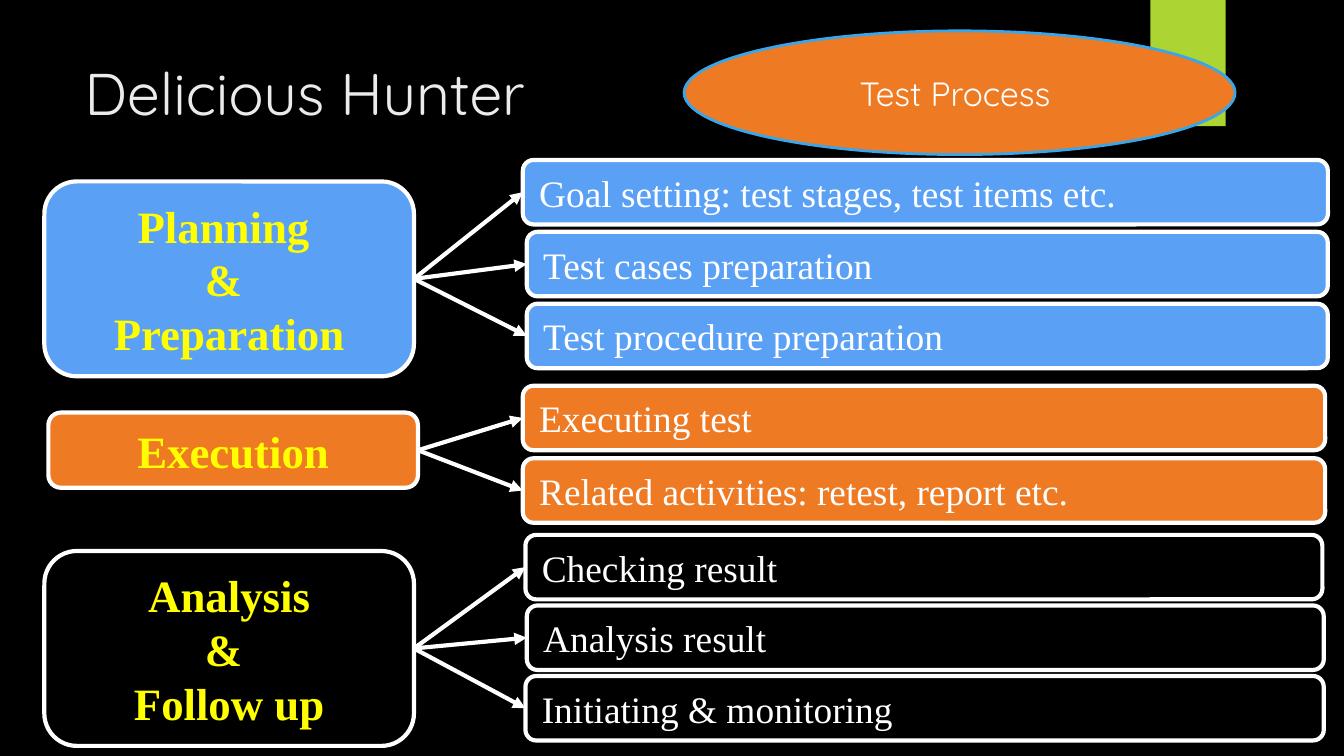
from pptx import Presentation
from pptx.util import Inches, Pt
from pptx.dml.color import RGBColor as RGB
from pptx.enum.shapes import MSO_SHAPE as Shape, MSO_CONNECTOR as Link
from pptx.enum.text import PP_ALIGN as Align, MSO_ANCHOR as Anchor
from pptx.oxml.ns import qn
from lxml.etree import SubElement

# Content: stages with their steps; each step is (text, left, width),
# and the steps are spread evenly between the tops of the first and last
TITLE = "Delicious Hunter"
TOPIC = "Test Process "
STAGES = [
    {"lines": ["Planning ", "& ", "Preparation"], "fill": "blue",
     "box": (0.33, 1.35, 2.75, 1.45), "first": 1.19, "last": 2.26,
     "steps": [("Goal setting: test stages, test items etc.", 3.89, 5.99),
               ("Test cases preparation", 3.92, 5.96),
               ("Test procedure preparation", 3.92, 5.96)]},
    {"lines": ["Execution"], "fill": "orange",
     "box": (0.36, 3.07, 2.75, 0.56), "first": 2.87, "last": 3.41,
     "steps": [("Executing test", 3.89, 5.97),
               ("Related activities: retest, report etc.", 3.89, 5.97)]},
    {"lines": ["Analysis", "& ", "Follow up"], "fill": "black",
     "box": (0.33, 4.1, 2.75, 1.45), "first": 3.98, "last": 5.03,
     "steps": [("Checking result", 3.91, 5.93),
               ("Analysis result", 3.92, 5.93),
               ("Initiating & monitoring", 3.91, 5.94)]},
]
STEP_H = 0.48


class Theme:
    color = {"black": "000000", "white": "FFFFFF", "pale": "EBEBEB",
             "blue": "5AA0F5", "orange": "EF7A24", "yellow": "FFFF00",
             "green": "ACD433", "sky": "38A6E9"}
    head, body = "Quicksand", "Times New Roman"
    title, topic, stage, step = 31.5, 18, 24, 20
    edge, rim = 2.25, 1.5


def tint(name):
    return RGB.from_string(Theme.color[name])


def write(frame, lines, size, face, color, align=Align.LEFT, bold=False,
          anchor=Anchor.MIDDLE):
    frame.word_wrap = True
    frame.vertical_anchor = anchor
    for i, line in enumerate(lines):
        para = frame.paragraphs[0] if i == 0 else frame.add_paragraph()
        para.alignment = align
        run = para.add_run()
        run.text = line
        font = run.font
        font.size, font.name, font.bold = Pt(size), face, bold
        font.color.rgb = tint(color)


def block(kind, box, fill, line=None, width=Theme.edge):
    shape = slide.shapes.add_shape(kind, *map(Inches, box))
    shape.shadow.inherit = False
    shape.fill.solid()
    shape.fill.fore_color.rgb = tint(fill)
    if line:
        shape.line.color.rgb = tint(line)
        shape.line.width = Pt(width)
    else:
        shape.line.fill.background()
    return shape


def arrow(start, end):
    link = slide.shapes.add_connector(Link.STRAIGHT, 0, 0, 0, 0)
    link.begin_connect(start, 3)  # right side
    link.end_connect(end, 1)  # left side
    link.line.color.rgb = tint("white")
    link.line.width = Pt(Theme.edge)
    SubElement(link.line._get_or_add_ln(), qn("a:tailEnd"), type="triangle")
    SubElement(link._element.spPr, qn("a:effectLst"))


# Slide (16:9) and background
deck = Presentation()
deck.slide_width = Inches(10)
deck.slide_height = Inches(10 * 9 / 16)
slide = deck.slides.add_slide(deck.slide_layouts[5])
slide.background.fill.solid()
slide.background.fill.fore_color.rgb = tint("black")

# Header: title, green tab and topic
title = slide.shapes.title
title.left, title.top, title.width, title.height = map(
    Inches, (0.53, 0.37, 7.71, 1.15))
write(title.text_frame, [TITLE], Theme.title, Theme.head, "pale",
      anchor=Anchor.TOP)
block(Shape.RECTANGLE, (8.56, 0, 0.56, 0.94), "green")
topic = block(Shape.OVAL, (5.09, 0.23, 4.1, 0.92), "orange", "sky", Theme.rim)
write(topic.text_frame, [TOPIC], Theme.topic, Theme.head, "white",
      Align.CENTER)

# Stages, each with arrows to its steps
for stage in STAGES:
    main = block(Shape.ROUNDED_RECTANGLE, stage["box"], stage["fill"], "white")
    write(main.text_frame, stage["lines"], Theme.stage, Theme.body, "yellow",
          Align.CENTER, bold=True)
    pitch = (stage["last"] - stage["first"]) / (len(stage["steps"]) - 1)
    for i, (text, left, width) in enumerate(stage["steps"]):
        top = stage["first"] + i * pitch
        step = block(Shape.ROUNDED_RECTANGLE, (left, top, width, STEP_H),
                     stage["fill"], "white")
        write(step.text_frame, [text], Theme.step, Theme.body, "white")
        arrow(main, step)

deck.save("out.pptx")
